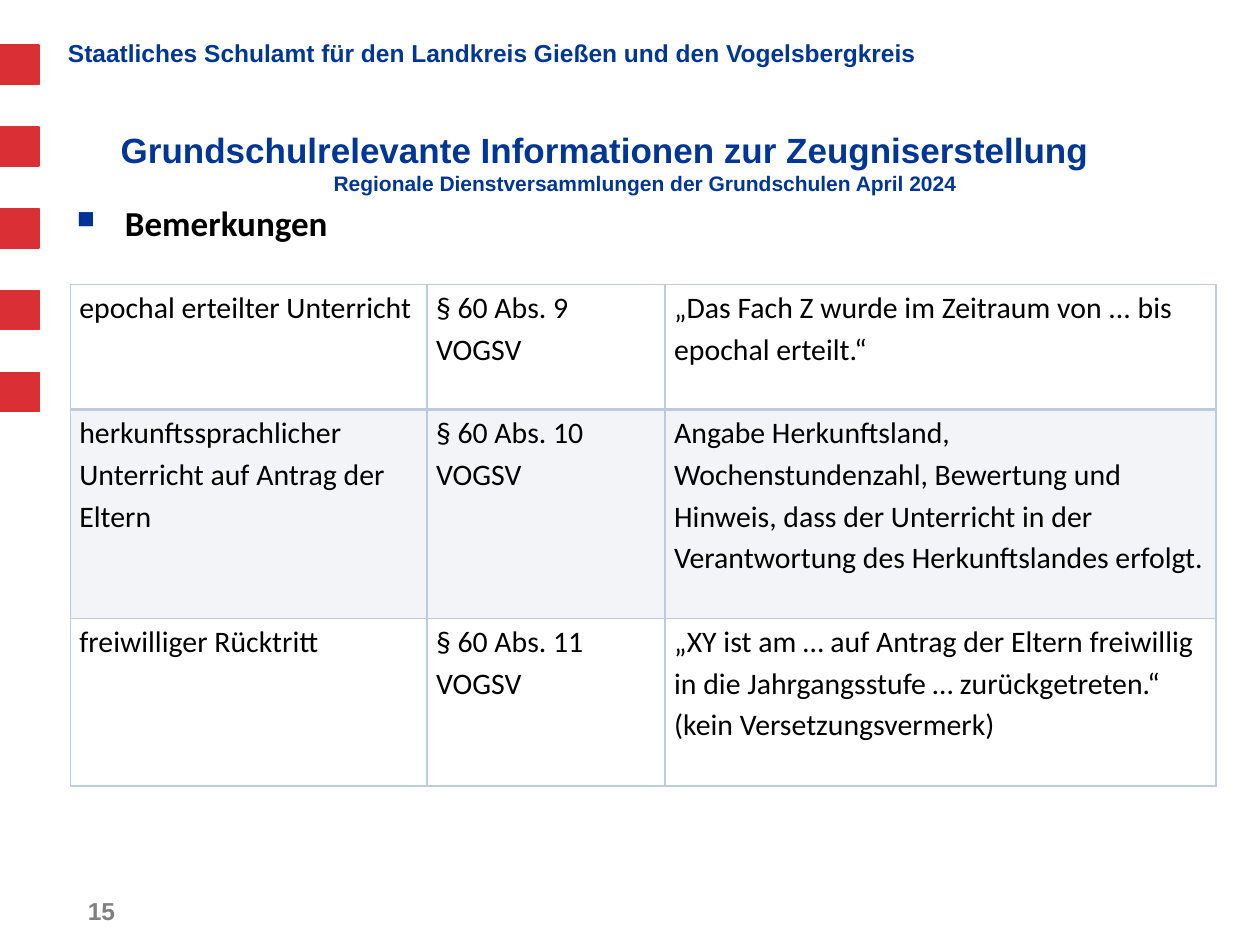
"""Build the slide on remarks in primary school reports."""
from dataclasses import dataclass

from lxml.etree import SubElement
from pptx import Presentation
from pptx.dml.color import RGBColor
from pptx.enum.shapes import MSO_SHAPE as SHAPE
from pptx.enum.text import MSO_ANCHOR as ANCHOR, PP_ALIGN as ALIGN
from pptx.oxml.ns import qn
from pptx.util import Cm, Pt

BLUE, RED, GREY, BLACK, BORDER = "003695", "DB2F36", "808080", "000000", "BECBDF"
SQUARE, SQUARE_TOP, SQUARE_STEP = 0.79, 0.91, 1.65
COLUMNS = (7.19, 4.8, 11.1)


@dataclass
class Style:
    size: float
    color: str
    name: str = "Arial"
    bold: bool = True


@dataclass
class Row:
    height: float
    cells: tuple[str, str, str]
    shaded: bool = False
    top: float = 1
    bottom: float = 1


ROWS = (
    Row(2.52, ("epochal erteilter Unterricht", "§ 60 Abs. 9 VOGSV",
               "„Das Fach Z wurde im Zeitraum von ... bis epochal erteilt.“"), bottom=2),
    Row(4.21, ("herkunftssprachlicher Unterricht auf Antrag der Eltern", "§ 60 Abs. 10 VOGSV",
               "Angabe Herkunftsland, Wochenstundenzahl, Bewertung und Hinweis, dass der "
               "Unterricht in der Verantwortung des Herkunftslandes erfolgt."),
        shaded=True, top=2),
    Row(3.37, ("freiwilliger Rücktritt", "§ 60 Abs. 11 VOGSV",
               "„XY ist am … auf Antrag der Eltern freiwillig in die Jahrgangsstufe … "
               "zurückgetreten.“\n(kein Versetzungsvermerk)")),
)


def rgb(color: str) -> RGBColor:
    return RGBColor.from_string(color)


def set_all(obj, values: dict) -> None:
    for key, value in values.items():
        setattr(obj, key, value)


def format_text(p, style: Style, **layout) -> None:
    set_all(p, layout)
    for r in p.runs:
        set_all(r.font, {"size": Pt(style.size), "name": style.name, "bold": style.bold})
        r.font.color.rgb = rgb(style.color)


def add_text(s, box: tuple, text: str, style: Style, margin: float = 0.25, **layout):
    tf = s.shapes.add_textbox(*map(Cm, box)).text_frame
    set_all(tf, {"word_wrap": True, "margin_left": Cm(margin), "margin_right": Cm(margin),
                 "text": text})
    p = tf.paragraphs[0]
    format_text(p, style, **layout)
    return p


def add_bullet(p, char: str, color: str, percent: int) -> None:
    pPr = p._p.get_or_add_pPr()
    pPr.set("marL", str(Cm(0.97)))
    pPr.set("indent", str(-Cm(0.97)))
    SubElement(SubElement(pPr, qn("a:buClr")), qn("a:srgbClr"), val=color)
    SubElement(pPr, qn("a:buSzPct"), val=str(percent * 1000))
    SubElement(pPr, qn("a:buChar"), char=char)


def add_square(s, top: float) -> None:
    sp = s.shapes.add_shape(SHAPE.RECTANGLE, 0, Cm(top), Cm(SQUARE), Cm(SQUARE))
    sp.shadow.inherit = False
    sp.fill.solid()
    sp.fill.fore_color.rgb = sp.line.color.rgb = rgb(RED)
    sp.line.width = Pt(0.75)


def format_title(title) -> None:
    set_all(title, {"left": Cm(1.3), "top": Cm(1.7), "width": Cm(23.42), "height": Cm(2.74)})
    tf = title.text_frame
    set_all(tf, {"text": "Grundschulrelevante Informationen zur Zeugniserstellung\n"
                         "Regionale Dienstversammlungen der Grundschulen April 2024",
                 "word_wrap": True, "vertical_anchor": ANCHOR.BOTTOM,
                 "margin_left": Cm(0.25), "margin_right": Cm(1.88),
                 "margin_top": 0, "margin_bottom": Cm(0.5)})
    for p, size in zip(tf.paragraphs, (20, 12)):
        format_text(p, Style(size, BLUE), alignment=ALIGN.CENTER,
                    space_before=Pt(0), line_spacing=1.0)
    tf.paragraphs[1]._p.get_or_add_pPr().set("marL", str(Cm(1.63)))


def format_cell(cell, text: str, row: Row) -> None:
    set_all(cell, {"margin_left": Cm(0.18), "margin_right": Cm(0.18),
                   "margin_top": 0, "margin_bottom": 0, "text": text})
    for p in cell.text_frame.paragraphs:
        format_text(p, Style(17, BLACK, "Calibri", False), line_spacing=1.15)
    tcPr = cell._tc.get_or_add_tcPr()
    for side, width in zip("LRTB", (1, 1, row.top, row.bottom)):
        ln = SubElement(tcPr, qn(f"a:ln{side}"), w=str(Pt(width)))
        SubElement(SubElement(ln, qn("a:solidFill")), qn("a:srgbClr"), val=BORDER)
    if row.shaded:
        cell.fill.solid()
        cell.fill.fore_color.rgb = rgb(BORDER)
        color = tcPr.find(qn("a:solidFill")).find(qn("a:srgbClr"))
        SubElement(color, qn("a:alpha"), val="20000")
    else:
        cell.fill.background()


def add_remarks_table(s) -> None:
    height = sum(row.height for row in ROWS)
    table = s.shapes.add_table(len(ROWS), len(COLUMNS), Cm(1.42), Cm(5.74),
                               Cm(sum(COLUMNS)), Cm(height)).table
    set_all(table, {"first_row": False, "horz_banding": False})
    for column, width in zip(table.columns, COLUMNS):
        column.width = Cm(width)
    for table_row, row in zip(table.rows, ROWS):
        table_row.height = Cm(row.height)
        for cell, text in zip(table_row.cells, row.cells):
            format_cell(cell, text, row)


def main() -> None:
    prs = Presentation()
    set_all(prs, {"slide_width": Cm(25.4), "slide_height": Cm(19.05)})
    s = prs.slides.add_slide(prs.slide_layouts[5])
    for i in range(5):
        add_square(s, SQUARE_TOP + i * SQUARE_STEP)
    add_text(s, (1.37, 0.71, 20.4, 1.24),
             "Staatliches Schulamt für den Landkreis Gießen und den Vogelsbergkreis",
             Style(14, BLUE), margin=0, line_spacing=0.9)
    format_title(s.shapes.title)
    heading = add_text(s, (1.3, 3.94, 23.37, 13), "Bemerkungen", Style(20, BLACK, "Calibri"))
    add_bullet(heading, "■", "003399", 70)
    add_text(s, (1.52, 17.93, 1.96, 0.84), "15", Style(14, GREY))
    add_remarks_table(s)
    prs.save("out.pptx")


if __name__ == "__main__":
    main()
